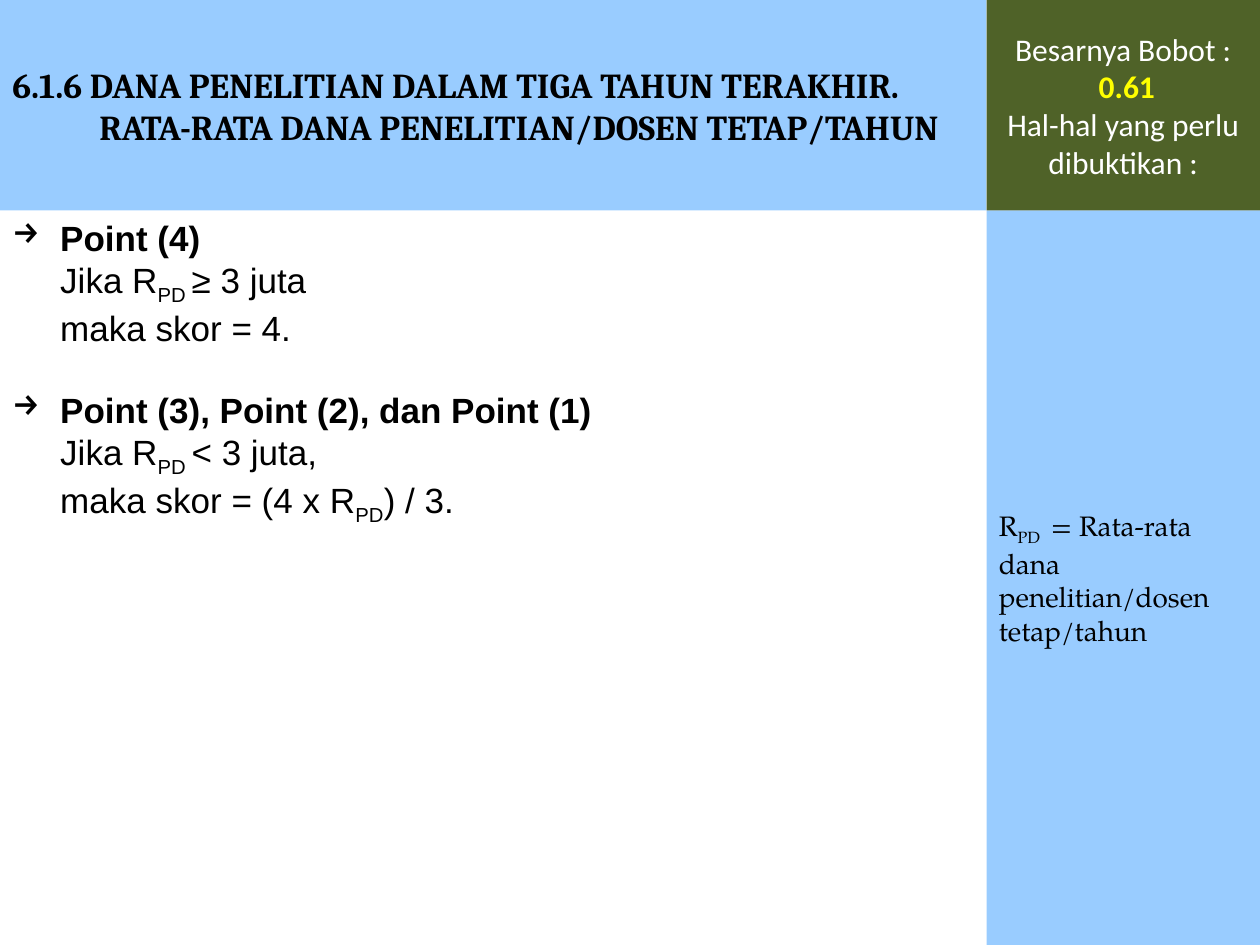
from dataclasses import dataclass

from lxml import etree
from pptx import Presentation
from pptx.dml.color import RGBColor
from pptx.enum.shapes import MSO_SHAPE
from pptx.enum.text import MSO_ANCHOR, PP_ALIGN
from pptx.oxml.ns import qn
from pptx.util import Inches, Pt

RECTANGLE = MSO_SHAPE.RECTANGLE
TOP, MIDDLE = MSO_ANCHOR.TOP, MSO_ANCHOR.MIDDLE
LEFT, CENTER = PP_ALIGN.LEFT, PP_ALIGN.CENTER

SLIDE_WIDTH, SLIDE_HEIGHT = 10, 7.5
MAIN_WIDTH, HEADER_HEIGHT = 7.83, 1.67
SIDE_WIDTH = SLIDE_WIDTH - MAIN_WIDTH
CONTENT_HEIGHT = SLIDE_HEIGHT - HEADER_HEIGHT
SKY, OLIVE = "99CCFF", "4F6228"
BLACK, WHITE, YELLOW = "000000", "FFFFFF", "FFFF00"


@dataclass
class Run:
    text: str
    bold: bool = False
    subscript: bool = False
    color: str = ""


@dataclass
class Line:
    runs: list[Run]
    bullet: str = ""
    margin: float = 0
    hanging: float = 0
    space_before: float = 0


@dataclass
class Panel:
    left: float
    top: float
    width: float
    height: float
    fill: str = ""


def rgb(color: str) -> RGBColor:
    return RGBColor.from_string(color)


def add_panel(slide, panel: Panel):
    box = [Inches(n) for n in (panel.left, panel.top, panel.width, panel.height)]
    if not panel.fill:
        return slide.shapes.add_textbox(*box)
    shape = slide.shapes.add_shape(RECTANGLE, *box)
    shape.shadow.inherit = False
    shape.fill.solid()
    shape.fill.fore_color.rgb = rgb(panel.fill)
    shape.line.fill.background()
    return shape


def write_text(shape, lines: list[Line], *, font: str, size: float,
               color: str = BLACK, align=LEFT, anchor=MIDDLE) -> None:
    frame = shape.text_frame
    frame.word_wrap = True
    frame.vertical_anchor = anchor
    for index, line in enumerate(lines):
        paragraph = frame.add_paragraph() if index else frame.paragraphs[0]
        paragraph.alignment = align
        paragraph.space_before = Pt(line.space_before)
        properties = paragraph._p.get_or_add_pPr()
        properties.set("marL", str(Inches(line.margin)))
        properties.set("indent", str(-Inches(line.hanging)))
        if line.bullet:
            etree.SubElement(properties, qn("a:buChar"), char=line.bullet)
        for part in line.runs:
            run = paragraph.add_run()
            run.text = part.text
            run.font.name = font
            run.font.size = Pt(size)
            run.font.bold = part.bold
            run.font.color.rgb = rgb(part.color or color)
            if part.subscript:
                run._r.get_or_add_rPr().set("baseline", "-25000")


def point_heading(text: str, space_before: float = 0) -> Line:
    return Line([Run(text, bold=True)], "→", 0.38, 0.38, space_before)


def point_detail(*runs: Run) -> Line:
    return Line(list(runs), margin=0.38)


def main() -> None:
    deck = Presentation()
    deck.slide_width, deck.slide_height = Inches(SLIDE_WIDTH), Inches(SLIDE_HEIGHT)
    slide = deck.slides.add_slide(deck.slide_layouts[6])

    scoring = add_panel(slide, Panel(0, HEADER_HEIGHT, MAIN_WIDTH, CONTENT_HEIGHT))
    write_text(scoring, [
        point_heading("Point (4)"),
        point_detail(Run("Jika R"), Run("PD ", subscript=True), Run("≥ 3 juta")),
        point_detail(Run("maka skor = 4.")),
        point_heading("Point (3), Point (2), dan Point (1)", space_before=23),
        point_detail(Run("Jika R"), Run("PD ", subscript=True), Run("< 3 juta,")),
        point_detail(Run("maka skor = (4 x R"), Run("PD", subscript=True), Run(") / 3.")),
    ], font="Arial", size=20, anchor=TOP)

    title = add_panel(slide, Panel(0, 0, MAIN_WIDTH, HEADER_HEIGHT, SKY))
    write_text(title, [
        Line([Run("6.1.6 DANA PENELITIAN DALAM TIGA TAHUN TERAKHIR. "
                  "RATA-RATA DANA PENELITIAN/DOSEN TETAP/TAHUN", bold=True)],
             margin=0.69, hanging=0.69),
    ], font="Cambria", size=20)

    definition = add_panel(
        slide, Panel(MAIN_WIDTH, HEADER_HEIGHT, SIDE_WIDTH, CONTENT_HEIGHT, SKY))
    write_text(definition, [
        Line([Run("R"), Run("PD ", subscript=True),
              Run(" = Rata-rata dana penelitian/dosen tetap/tahun")],
             space_before=3.2),
    ], font="TeX Gyre Pagella", size=16)

    weight = add_panel(slide, Panel(MAIN_WIDTH, 0, SIDE_WIDTH, HEADER_HEIGHT, OLIVE))
    write_text(weight, [
        Line([Run("Besarnya Bobot :")]),
        Line([Run(" "), Run("0.61", bold=True, color=YELLOW)]),
        Line([Run("Hal-hal yang perlu dibuktikan :")]),
    ], font="Calibri", size=18, color=WHITE, align=CENTER)

    deck.save("out.pptx")


if __name__ == "__main__":
    main()
